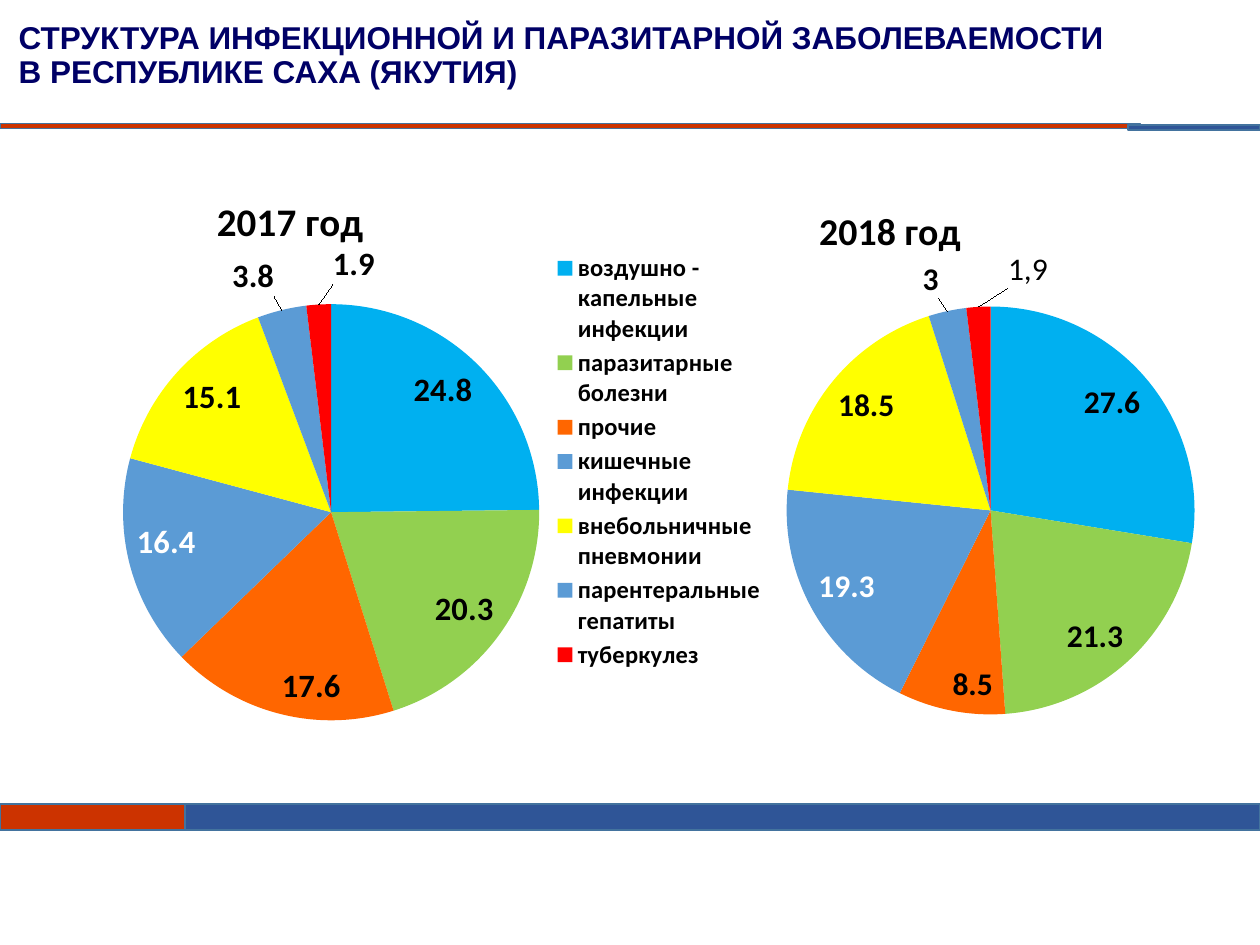
from pptx import Presentation
from pptx.chart.data import CategoryChartData
from pptx.dml.color import RGBColor
from pptx.enum.chart import XL_CHART_TYPE, XL_LABEL_POSITION, XL_LEGEND_POSITION
from pptx.enum.shapes import MSO_SHAPE
from pptx.enum.text import MSO_ANCHOR
from pptx.oxml import parse_xml
from pptx.oxml.ns import nsdecls
from pptx.util import Inches, Pt

NAVY = RGBColor(0x00, 0x00, 0x66)
RED = RGBColor(0xCC, 0x33, 0x00)
BLUE = RGBColor(0x2F, 0x55, 0x97)
EDGE = RGBColor(0x43, 0x73, 0x9E)
BLACK = RGBColor(0x00, 0x00, 0x00)
WHITE = RGBColor(0xFF, 0xFF, 0xFF)
SKY = RGBColor(0x5B, 0x9B, 0xD5)
SLICES = [
    RGBColor(0x00, 0xB0, 0xF0),
    RGBColor(0x92, 0xD0, 0x50),
    RGBColor(0xFF, 0x66, 0x00),
    SKY,
    RGBColor(0xFF, 0xFF, 0x00),
    SKY,
    RGBColor(0xFF, 0x00, 0x00),
]
DISEASES = [
    "воздушно - капельные инфекции",
    "паразитарные болезни",
    "прочие",
    "кишечные инфекции",
    "внебольничные пневмонии",
    "парентеральные гепатиты",
    "туберкулез",
]
WHITE_LABEL = 3
COLUMNS, ROWS = 100, 75


def style_font(font, size, color=BLACK, bold=True, name="Calibri"):
    font.size, font.bold, font.name = Pt(size), bold, name
    font.color.rgb = color


def write(frame, text, **style):
    para = frame.paragraphs[0]
    span = para.add_run()
    span.text = text
    style_font(span.font, **style)
    return para


def arrange(element, index, target=None, edge=True, **shares):
    for old in element.xpath("./c:layout"):
        element.remove(old)
    settings = [("layoutTarget", target)] if target else []
    if edge:
        settings += [("xMode", "edge"), ("yMode", "edge")]
    settings += shares.items()
    tags = "".join(f'<c:{tag} val="{value}"/>' for tag, value in settings)
    layout = f"<c:layout {nsdecls('c')}><c:manualLayout>{tags}</c:manualLayout></c:layout>"
    element.insert(index, parse_xml(layout))


class SlideBuilder:
    """Draws elements on the current slide in grid columns and rows."""

    def __init__(self, deck):
        self.column = deck.slide_width / COLUMNS
        self.row = deck.slide_height / ROWS
        self.page = deck.slides.add_slide(deck.slide_layouts[6])

    def area(self, left, top, width, height):
        return (round(left * self.column), round(top * self.row),
                round(width * self.column), round(height * self.row))

    def heading(self, text, *place):
        box = self.page.shapes.add_textbox(*self.area(*place))
        box.text_frame.word_wrap = True
        box.text_frame.vertical_anchor = MSO_ANCHOR.MIDDLE
        para = write(box.text_frame, text, size=18, color=NAVY, name="Arial")
        para.line_spacing = 0.9

    def bar(self, color, *place):
        bar = self.page.shapes.add_shape(MSO_SHAPE.RECTANGLE, *self.area(*place))
        bar.shadow.inherit = False
        bar.fill.solid()
        bar.fill.fore_color.rgb = color
        bar.line.color.rgb = EDGE
        bar.line.width = Pt(1)

    def pie(self, title, values, place, size, plot, title_at, moved, legend=None, texts=None):
        data = CategoryChartData(number_format="0.0" if not legend else "General")
        data.categories = DISEASES
        data.add_series(title, values)
        chart = self.page.shapes.add_chart(XL_CHART_TYPE.PIE, *self.area(*place), data).chart
        style_font(chart.font, size, bold=False)
        chart.has_title = True
        write(chart.chart_title.text_frame, title, size=round(size * 1.2, 1))
        arrange(chart.chart_title.element, 1, **title_at)
        arrange(chart.element.xpath(".//c:plotArea")[0], 0, target="inner", **plot)
        chart.has_legend = bool(legend)
        if legend:
            chart.legend.position = XL_LEGEND_POSITION.RIGHT
            chart.legend.include_in_layout = False
            style_font(chart.legend.font, 14)
            arrange(chart.element.xpath(".//c:legend")[0], 1, **legend)
        chart.plots[0].vary_by_categories = True
        self.slices(chart.plots[0].series[0], size, moved, texts or {})

    def slices(self, series, size, moved, texts):
        labels = series.data_labels
        labels.show_value = True
        labels.position = XL_LABEL_POSITION.INSIDE_END
        style_font(labels.font, size)
        for index, color in enumerate(SLICES):
            point = series.points[index]
            point.format.fill.solid()
            point.format.fill.fore_color.rgb = color
            if index == WHITE_LABEL:
                style_font(point.data_label.font, size, WHITE)
                point.data_label.position = XL_LABEL_POSITION.INSIDE_END
            if index in moved:
                label = point.data_label
                if index in texts:
                    write(label.text_frame, texts[index], size=size, bold=False)
                else:
                    style_font(label.font, size)
                label.position = XL_LABEL_POSITION.OUTSIDE_END
                across, down = moved[index]
                element = series.data_labels._element.xpath(f"./c:dLbl[c:idx/@val='{index}']")[0]
                arrange(element, 1, edge=False, x=across, y=down)


def main():
    deck = Presentation()
    deck.slide_width, deck.slide_height = Inches(10), Inches(7.5)
    slide = SlideBuilder(deck)
    slide.heading("СТРУКТУРА ИНФЕКЦИОННОЙ И ПАРАЗИТАРНОЙ ЗАБОЛЕВАЕМОСТИ В РЕСПУБЛИКЕ САХА (ЯКУТИЯ)",
                  0.5, 1.3, 88.8, 6.3)
    slide.bar(RED, 0, 9.8, 90.5, 0.4)
    slide.bar(RED, 0, 63.8, 14.7, 2.1)
    slide.bar(BLUE, 14.7, 63.8, 85.3, 2.1)
    slide.pie("2018 год", [27.6, 21.3, 8.5, 19.3, 18.5, 3, 1.9],
              (42.4, 14.3, 56.6, 45.6), 18,
              plot=dict(x=0.31, y=0.22, w=0.66, h=0.71),
              title_at=dict(x=0.39, y=0.03),
              moved={5: (-0.01, -0.01), 6: (0.07, -0.02)},
              legend=dict(x=0.02, y=0.12, w=0.31, h=0.74),
              texts={6: "1,9"})
    slide.pie("2017 год", [24.8, 20.3, 17.6, 16.4, 15.1, 3.8, 1.9],
              (0.2, 13.3, 47, 49.3), 18.6,
              plot=dict(x=0.19, y=0.22, w=0.73, h=0.67),
              title_at=dict(x=0.35, y=0.03),
              moved={5: (-0.01, -0.01), 6: (0.06, -0.02)})
    slide.bar(BLUE, 89.5, 9.9, 10.5, 0.4)
    deck.save("out.pptx")


if __name__ == "__main__":
    main()
